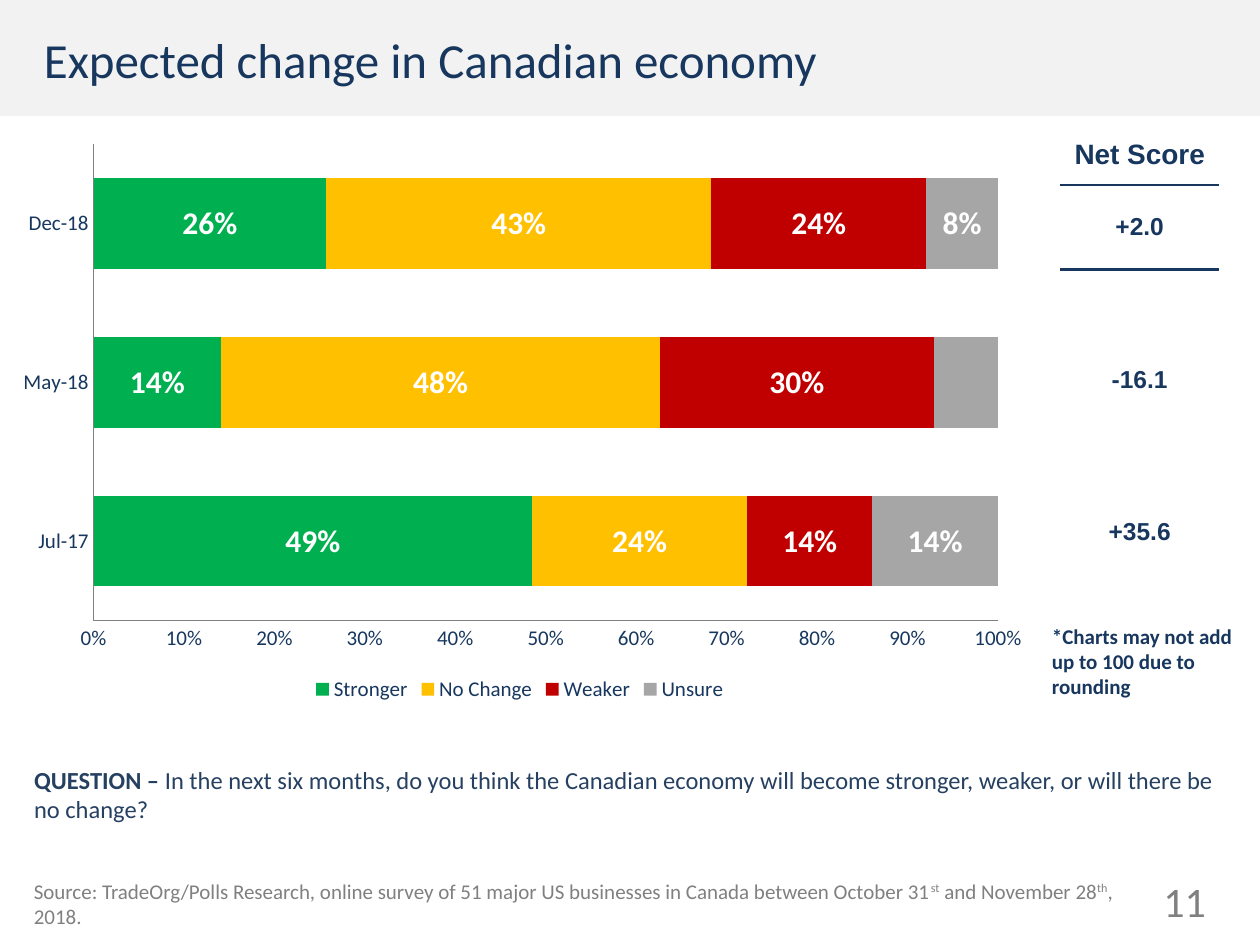
from dataclasses import dataclass
from typing import NamedTuple

from lxml.etree import SubElement
from pptx import Presentation
from pptx.chart.data import CategoryChartData
from pptx.dml.color import RGBColor
from pptx.enum.chart import XL_CHART_TYPE as ChartType, XL_LEGEND_POSITION as LegendPosition
from pptx.enum.chart import XL_TICK_MARK as TickMark, XL_LABEL_POSITION as LabelPosition
from pptx.enum.shapes import MSO_SHAPE as ShapeType
from pptx.enum.text import MSO_ANCHOR as Anchor, PP_ALIGN as Align
from pptx.oxml import parse_xml
from pptx.oxml.ns import nsdecls, qn
from pptx.util import Inches, Pt


@dataclass(frozen=True)
class Theme:
    navy: str = "17375E"
    question: str = "254061"
    gray: str = "808080"
    band: str = "F2F2F2"
    white: str = "FFFFFF"
    body_font: str = "Calibri"
    score_font: str = "Arial"
    title: int = 28
    page: int = 24
    label: int = 18
    heading: int = 16
    body: int = 14
    small: int = 12


class Box(NamedTuple):
    """Left, top, width and height in percent of the slide."""
    left: float
    top: float
    width: float
    height: float


class Run(NamedTuple):
    text: str
    bold: bool = False
    raised: bool = False


class TextBlock(NamedTuple):
    box: Box
    runs: list[Run]
    size: int
    color: str
    anchor: Anchor = Anchor.TOP
    align: Align = Align.LEFT
    margins: tuple[float, float] = (0.1, 0.05)


class Answer(NamedTuple):
    name: str
    color: str
    shares: tuple[float, ...]
    hidden_label: int | None = None


class ScoreRow(NamedTuple):
    text: str
    height: float


THEME = Theme()
SLIDE_WIDTH, SLIDE_HEIGHT = Inches(10), Inches(7.5)
HEADER = Box(0, 0, 100, 12.27)
CHART = Box(0, 14, 82.5, 60.8)
SCORES = Box(84.2, 13.07, 12.5, 47.6)
PLOT_LAYOUT = {"x": 0.09, "y": 0.02, "w": 0.87, "h": 0.83}
PERIODS = ("Jul-17", "May-18", "Dec-18")
ANSWERS = [
    Answer("Stronger", "00B050", (0.49, 0.14, 0.26)),
    Answer("No Change", "FFC000", (0.24, 0.48, 0.43)),
    Answer("Weaker", "C00000", (0.14, 0.30, 0.24)),
    Answer("Unsure", "A6A6A6", (0.14, 0.07, 0.08), hidden_label=1),
]
SCORE_ROWS = [
    ScoreRow("Net Score", 0.49), ScoreRow("+2.0", 0.67), ScoreRow("", 0.49),
    ScoreRow("-16.1", 0.77), ScoreRow("", 0.49), ScoreRow("+35.6", 0.66),
]
TEXTS = [
    TextBlock(Box(2.5, 0.13, 69.1, 12.13), [Run("Expected change in Canadian economy")],
              THEME.title, THEME.navy, Anchor.MIDDLE),
    TextBlock(Box(82.5, 65.33, 17.5, 9.47),
              [Run("*Charts may not add up to 100 due to rounding", bold=True)],
              THEME.small, THEME.navy),
    TextBlock(Box(2, 80.4, 97.5, 10.4),
              [Run("QUESTION – ", bold=True),
               Run("In the next six months, do you think the Canadian economy will become "
                   "stronger, weaker, or will there be no change?")],
              THEME.body, THEME.question, margins=(0.07, 0.04)),
    TextBlock(Box(1.7, 92.27, 88.3, 5.33),
              [Run("Source: TradeOrg/Polls Research, online survey of 51 major US businesses "
                   "in Canada between October 31"),
               Run("st", raised=True), Run(" and November 28"),
               Run("th", raised=True), Run(", 2018.")],
              THEME.small, THEME.gray),
    TextBlock(Box(90, 92.67, 6.7, 5.33), [Run("11")],
              THEME.page, THEME.gray, Anchor.MIDDLE, Align.RIGHT),
]


def place(box: Box) -> tuple[int, int, int, int]:
    return (round(SLIDE_WIDTH * box.left / 100), round(SLIDE_HEIGHT * box.top / 100),
            round(SLIDE_WIDTH * box.width / 100), round(SLIDE_HEIGHT * box.height / 100))


def style_font(font, size: int, color: str, bold: bool = False,
               name: str = THEME.body_font) -> None:
    font.name, font.size, font.bold = name, Pt(size), bold
    font.color.rgb = RGBColor.from_string(color)


def draw_header(slide) -> None:
    shape = slide.shapes.add_shape(ShapeType.RECTANGLE, *place(HEADER))
    shape.shadow.inherit = False
    shape.fill.solid()
    shape.fill.fore_color.rgb = RGBColor.from_string(THEME.band)
    shape.line.fill.background()


def draw_text(slide, block: TextBlock) -> None:
    frame = slide.shapes.add_textbox(*place(block.box)).text_frame
    frame.word_wrap = True
    frame.vertical_anchor = block.anchor
    frame.margin_left = frame.margin_right = Inches(block.margins[0])
    frame.margin_top = frame.margin_bottom = Inches(block.margins[1])
    paragraph = frame.paragraphs[0]
    paragraph.alignment = block.align
    for part in block.runs:
        run = paragraph.add_run()
        run.text = part.text
        style_font(run.font, block.size, block.color, part.bold)
        if part.raised:
            run.font._element.set("baseline", "30000")


def draw_rule(cell, side: str) -> None:
    cell._tc.get_or_add_tcPr().insert(0, parse_xml(
        f'<a:{side} {nsdecls("a")} w="{Pt(1.5)}"><a:solidFill>'
        f'<a:srgbClr val="{THEME.navy}"/></a:solidFill></a:{side}>'))


def draw_scores(slide) -> None:
    table = slide.shapes.add_table(len(SCORE_ROWS), 1, *place(SCORES)).table
    table.first_row = table.horz_banding = False
    for index, score in enumerate(SCORE_ROWS):
        table.rows[index].height = Inches(score.height)
        cell = table.cell(index, 0)
        cell.fill.background()
        cell.vertical_anchor = Anchor.MIDDLE
        cell.margin_left = cell.margin_right = Inches(0.05)
        if score.text:
            paragraph = cell.text_frame.paragraphs[0]
            paragraph.alignment = Align.CENTER
            run = paragraph.add_run()
            run.text = score.text
            size = THEME.body if index else THEME.heading
            style_font(run.font, size, THEME.navy, True, THEME.score_font)
    draw_rule(table.cell(0, 0), "lnB")
    draw_rule(table.cell(1, 0), "lnT")


def style_axis(axis) -> None:
    axis.has_major_gridlines = False
    axis.major_tick_mark = axis.minor_tick_mark = TickMark.NONE
    axis.format.line.color.rgb = RGBColor.from_string(THEME.gray)
    style_font(axis.tick_labels.font, THEME.small, THEME.navy)


def style_series(series, answer: Answer) -> None:
    series.format.fill.solid()
    series.format.fill.fore_color.rgb = RGBColor.from_string(answer.color)
    labels = series.data_labels
    labels.show_value = True
    labels.number_format, labels.number_format_is_linked = "0%", False
    labels.position = LabelPosition.CENTER
    style_font(labels.font, THEME.label, THEME.white, True)
    if answer.hidden_label is not None:
        labels._element.insert(0, parse_xml(
            f'<c:dLbl {nsdecls("c")}><c:idx val="{answer.hidden_label}"/>'
            '<c:delete val="1"/></c:dLbl>'))


def set_plot_layout(chart) -> None:
    plot_area = chart._chartSpace.chart.plotArea
    for old_layout in plot_area.findall(qn("c:layout")):
        plot_area.remove(old_layout)
    layout = parse_xml(f'<c:layout {nsdecls("c")}><c:manualLayout/></c:layout>')
    settings = {"layoutTarget": "inner", "xMode": "edge", "yMode": "edge", **PLOT_LAYOUT}
    for tag, value in settings.items():
        SubElement(layout[0], qn(f"c:{tag}")).set("val", str(value))
    plot_area.insert(0, layout)


def draw_chart(slide) -> None:
    data = CategoryChartData(number_format="0%")
    data.categories = PERIODS
    for answer in ANSWERS:
        data.add_series(answer.name, answer.shares)
    chart = slide.shapes.add_chart(ChartType.BAR_STACKED_100, *place(CHART), data).chart
    style_font(chart.font, THEME.small, THEME.navy)
    chart.has_title = False
    chart.has_legend = True
    chart.legend.position = LegendPosition.BOTTOM
    chart.legend.include_in_layout = False
    style_font(chart.legend.font, THEME.small, THEME.navy)
    plot = chart.plots[0]
    plot.gap_width, plot.overlap, plot.vary_by_categories = 75, 100, False
    for series, answer in zip(plot.series, ANSWERS):
        style_series(series, answer)
    for axis in (chart.category_axis, chart.value_axis):
        style_axis(axis)
    values = chart.value_axis
    values.minimum_scale, values.maximum_scale, values.major_unit = 0, 1, 0.1
    values.tick_labels.number_format = "0%"
    values.tick_labels.number_format_is_linked = False
    set_plot_layout(chart)


def main() -> None:
    presentation = Presentation()
    presentation.slide_width, presentation.slide_height = SLIDE_WIDTH, SLIDE_HEIGHT
    slide = presentation.slides.add_slide(presentation.slide_layouts[6])
    draw_header(slide)
    draw_chart(slide)
    draw_scores(slide)
    for block in TEXTS:
        draw_text(slide, block)
    presentation.save("out.pptx")


if __name__ == "__main__":
    main()
